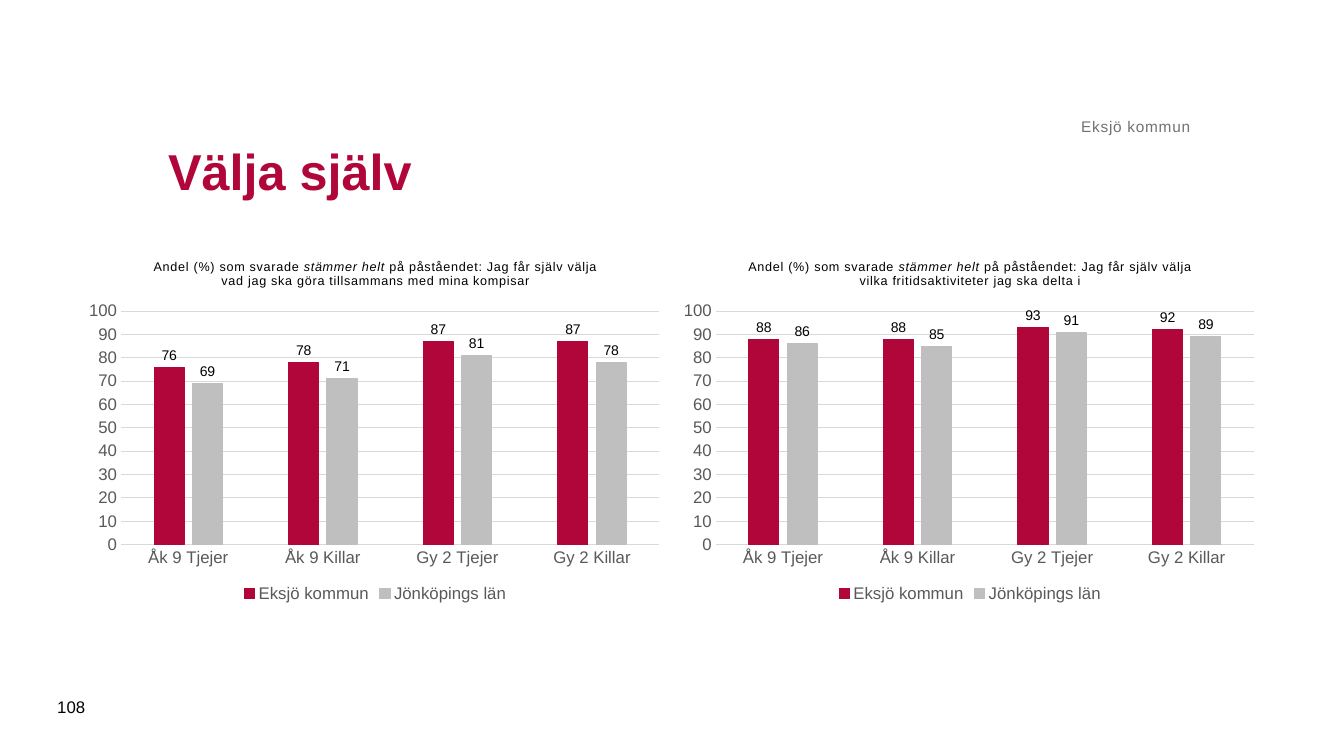
import pptx
import pptx.chart.data
import pptx.dml.color
import pptx.enum.chart
import pptx.enum.text
import pptx.oxml
import pptx.util

Pt = pptx.util.Pt
FONT = "Arial"
CRIMSON, SILVER, GRID, GREY, BLACK = "B1063A", "BFBFBF", "D9D9D9", "595959", "000000"
GROUPS = ["Åk 9 Tjejer", "Åk 9 Killar", "Gy 2 Tjejer", "Gy 2 Killar"]
NUMBER_FORMAT = "#,##0;#,##0"
CHART_TOP, CHART_WIDTH, CHART_HEIGHT = 172.8, 422.6, 260.6
PLOT_LAYOUT = {"x": 0.07, "y": 0.19, "w": 0.91, "h": 0.64}
QUESTIONS = [
    (56.9, "vad jag ska göra tillsammans med mina kompisar",
     [76, 78, 87, 87], [69, 71, 81, 78]),
    (481.7, "vilka fritidsaktiviteter jag ska delta i",
     [88, 88, 93, 92], [86, 85, 91, 89]),
]


def rgb(hex_colour):
    return pptx.dml.color.RGBColor.from_string(hex_colour)


def style_font(font, size, colour, bold=False, italic=False):
    font.name = FONT
    font.size = Pt(size)
    font.color.rgb = rgb(colour)
    font.bold = bold
    font.italic = italic


def style_line(line, colour):
    line.color.rgb = rgb(colour)
    line.width = Pt(0.75)


def set_spacing(run, points):
    run.font._element.set("spc", str(int(points * 100)))


def add_text(slide, box, text, size, colour, anchor="MIDDLE", align="LEFT",
             bold=False, spacing=0, inset=True):
    frame = slide.shapes.add_textbox(*map(Pt, box)).text_frame
    frame.word_wrap = True
    frame.vertical_anchor = pptx.enum.text.MSO_ANCHOR[anchor]
    if not inset:
        frame.margin_left = frame.margin_right = 0
        frame.margin_top = frame.margin_bottom = 0
    frame.text = text
    paragraph = frame.paragraphs[0]
    paragraph.alignment = pptx.enum.text.PP_ALIGN[align]
    run = paragraph.runs[0]
    style_font(run.font, size, colour, bold)
    if spacing:
        set_spacing(run, spacing)


def add_question(chart, ending):
    chart.has_title = True
    chart.chart_title.include_in_layout = False
    paragraph = chart.chart_title.text_frame.paragraphs[0]
    for text, italic in [("Andel (%) som svarade ", False), ("stämmer helt", True),
                         (f" på påståendet: Jag får själv välja {ending}", False)]:
        run = paragraph.add_run()
        run.text = text
        style_font(run.font, 9, BLACK, italic=italic)
        set_spacing(run, 0.5)


def style_axes(chart):
    groups, share = chart.category_axis, chart.value_axis
    for axis in (groups, share):
        axis.major_tick_mark = pptx.enum.chart.XL_TICK_MARK.NONE
        axis.minor_tick_mark = pptx.enum.chart.XL_TICK_MARK.NONE
        style_font(axis.tick_labels.font, 12, GREY)
    style_line(groups.format.line, GRID)
    share.minimum_scale, share.maximum_scale, share.major_unit = 0, 100, 10
    share.format.line.fill.background()
    share.has_major_gridlines = True
    style_line(share.major_gridlines.format.line, GRID)
    share.tick_labels.number_format = NUMBER_FORMAT
    share.tick_labels.number_format_is_linked = False


def style_series(series, colour):
    series.format.fill.solid()
    series.format.fill.fore_color.rgb = rgb(colour)
    style_line(series.format.line, colour)
    labels = series.data_labels
    labels.show_value = True
    labels.position = pptx.enum.chart.XL_LABEL_POSITION.OUTSIDE_END
    labels.number_format = NUMBER_FORMAT
    labels.number_format_is_linked = False
    style_font(labels.font, 10, BLACK)


def place_plot(chart):
    plot_area = chart._chartSpace.chart.plotArea
    for layout in plot_area.findall(pptx.oxml.ns.qn("c:layout")):
        plot_area.remove(layout)
    sizes = "".join(f'<c:{key} val="{value}"/>' for key, value in PLOT_LAYOUT.items())
    plot_area.insert(0, pptx.oxml.parse_xml(
        f'<c:layout {pptx.oxml.ns.nsdecls("c")}><c:manualLayout>'
        '<c:layoutTarget val="inner"/><c:xMode val="edge"/><c:yMode val="edge"/>'
        f'{sizes}</c:manualLayout></c:layout>'))


def add_question_chart(slide, left, ending, municipality, county):
    answers = pptx.chart.data.CategoryChartData()
    answers.categories = GROUPS
    answers.add_series("Eksjö kommun", municipality)
    answers.add_series("Jönköpings län", county)
    chart = slide.shapes.add_chart(
        pptx.enum.chart.XL_CHART_TYPE.COLUMN_CLUSTERED, Pt(left), Pt(CHART_TOP),
        Pt(CHART_WIDTH), Pt(CHART_HEIGHT), answers).chart
    style_font(chart.font, 10, BLACK)
    add_question(chart, ending)
    style_axes(chart)
    plot = chart.plots[0]
    plot.gap_width, plot.overlap, plot.vary_by_categories = 219, -27, False
    for series, colour in zip(plot.series, (CRIMSON, SILVER)):
        style_series(series, colour)
    chart.has_legend = True
    chart.legend.position = pptx.enum.chart.XL_LEGEND_POSITION.BOTTOM
    chart.legend.include_in_layout = False
    style_font(chart.legend.font, 12, GREY)
    place_plot(chart)


def main():
    deck = pptx.Presentation()
    deck.slide_width, deck.slide_height = Pt(960), Pt(540)
    slide = deck.slides.add_slide(deck.slide_layouts[6])
    for question in QUESTIONS:
        add_question_chart(slide, *question)
    add_text(slide, (113, 70.6, 737.3, 102.2), "Välja själv", 36, CRIMSON, bold=True)
    add_text(slide, (113, 44.6, 737.3, 52.6), "Eksjö kommun", 11, "717171",
             anchor="BOTTOM", align="RIGHT", spacing=0.5, inset=False)
    add_text(slide, (33.8, 490.3, 41, 28.8), "108", 12, BLACK)
    deck.save("out.pptx")


if __name__ == "__main__":
    main()
